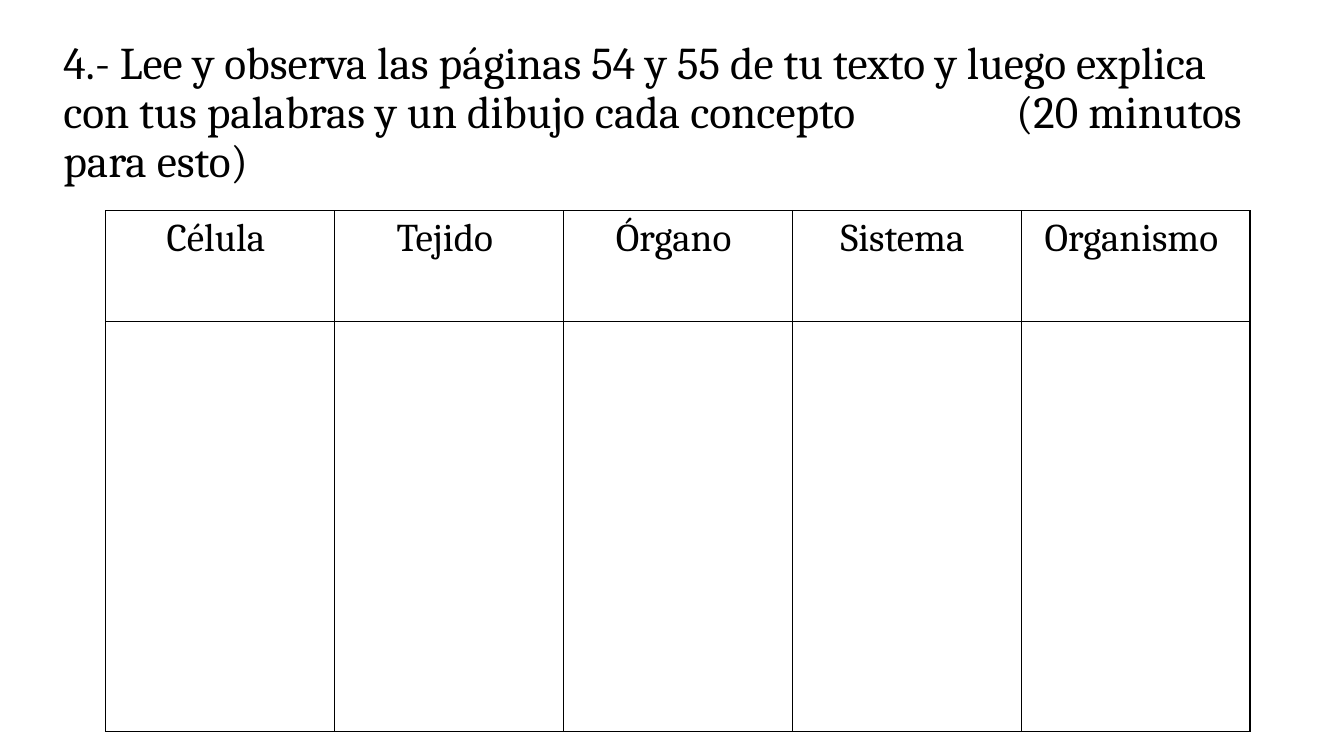
from lxml import etree
from pptx import Presentation
from pptx.dml.color import RGBColor
from pptx.enum.text import MSO_ANCHOR, PP_ALIGN
from pptx.oxml.ns import qn
from pptx.util import Inches, Pt

MIDDLE = MSO_ANCHOR.MIDDLE
CENTER = PP_ALIGN.CENTER
BLACK = RGBColor(0, 0, 0)
WHITE = RGBColor(255, 255, 255)
FONT = "Cambria"

CONCEPTS = ["Célula ", "Tejido ", "Órgano ", "Sistema ", "Organismo "]
COLUMN_WIDTH = Inches(2.27)
ROW_HEIGHTS = [Inches(1.1), Inches(4.07)]


def add_run(paragraph, text, size):
    run = paragraph.add_run()
    run.text = text
    run.font.name = FONT
    run.font.size = Pt(size)
    run.font.color.rgb = BLACK


def add_borders(cell):
    properties = cell._tc.get_or_add_tcPr()
    for position, side in enumerate(("lnL", "lnR", "lnT", "lnB")):
        border = etree.Element(qn(f"a:{side}"), w=str(Pt(1)))
        fill = etree.SubElement(border, qn("a:solidFill"))
        etree.SubElement(fill, qn("a:srgbClr"), val=str(BLACK))
        properties.insert(position, border)


prs = Presentation()
prs.slide_width = Inches(13.33)
prs.slide_height = Inches(7.5)
slide = prs.slides.add_slide(prs.slide_layouts[6])

# Instruction, with the time limit set off by a tab stop
instruction = slide.shapes.add_textbox(
    Inches(0.53), Inches(0.4), Inches(11.89), Inches(1.45)).text_frame
instruction.word_wrap = True
instruction.vertical_anchor = MIDDLE
sentence = instruction.paragraphs[0]
sentence.line_spacing = 0.9
tabs = etree.SubElement(sentence._p.get_or_add_pPr(), qn("a:tabLst"))
etree.SubElement(tabs, qn("a:tab"), pos=str(Inches(9.45)), algn="l")
add_run(sentence, "4.- Lee y observa las páginas 54 y 55 de tu texto y luego explica "
        "con tus palabras y un dibujo cada concepto\t(20 minutos para esto)", 32.4)

# One column per concept, with room below to explain and draw
concept_table = slide.shapes.add_table(
    len(ROW_HEIGHTS), len(CONCEPTS), Inches(1.05), Inches(2.09),
    COLUMN_WIDTH * len(CONCEPTS), sum(ROW_HEIGHTS)).table
concept_table.first_row = False
concept_table.horz_banding = False
for row, height in zip(concept_table.rows, ROW_HEIGHTS):
    row.height = height
for column, concept in enumerate(CONCEPTS):
    concept_table.columns[column].width = COLUMN_WIDTH
    heading = concept_table.cell(0, column).text_frame.paragraphs[0]
    heading.alignment = CENTER
    add_run(heading, concept, 28)
for cell in concept_table.iter_cells():
    cell.fill.solid()
    cell.fill.fore_color.rgb = WHITE
    add_borders(cell)

prs.save("out.pptx")
